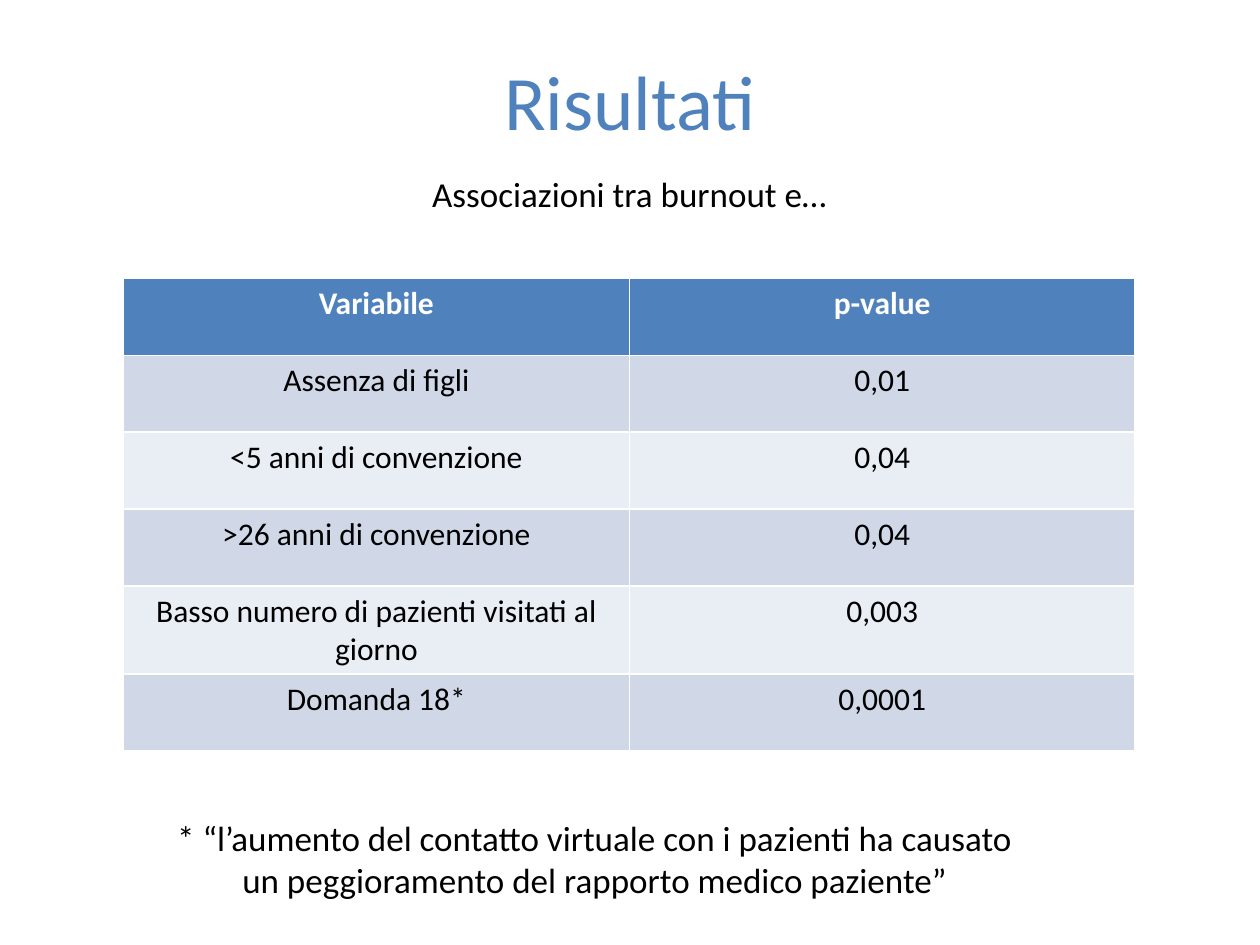
from pptx import Presentation
from pptx import util as u
from pptx.dml.color import RGBColor
from pptx.enum import text

FONT = "Calibri"
BLUE = RGBColor(0x4F, 0x81, 0xBD)
BLACK = RGBColor(0, 0, 0)
WHITE = RGBColor(0xFF, 0xFF, 0xFF)
BANDS = (RGBColor(0xE9, 0xED, 0xF4), RGBColor(0xD0, 0xD8, 0xE8))

ROWS = [
    ("Variabile", "p-value"),
    ("Assenza di figli", "0,01"),
    ("<5 anni di convenzione", "0,04"),
    (">26 anni di convenzione", "0,04"),
    ("Basso numero di pazienti visitati al giorno", "0,003"),
    ("Domanda 18*", "0,0001"),
]
ROW_HEIGHT = 0.61


def place(shape, left, top, width, height):
    shape.left, shape.top = u.Inches(left), u.Inches(top)
    shape.width, shape.height = u.Inches(width), u.Inches(height)


def write(frame, words, size, color, bold=False):
    """Fill a text frame with one centred paragraph."""
    frame.text = words
    para = frame.paragraphs[0]
    para.alignment = text.PP_ALIGN.CENTER
    para.font.name = FONT
    para.font.size = u.Pt(size)
    para.font.bold = bold
    para.font.color.rgb = color


def add_results(page, left, top, width):
    # The default table style supplies the white rules
    frame = page.shapes.add_table(
        len(ROWS), len(ROWS[0]), u.Inches(left), u.Inches(top),
        u.Inches(width), u.Inches(ROW_HEIGHT * len(ROWS)))
    for r, row in enumerate(ROWS):
        header = r == 0
        for c, words in enumerate(row):
            cell = frame.table.cell(r, c)
            write(cell.text_frame, words, 18, WHITE if header else BLACK, header)
            cell.fill.solid()
            cell.fill.fore_color.rgb = BLUE if header else BANDS[r % 2]


def main():
    deck = Presentation()
    deck.slide_width, deck.slide_height = u.Inches(10), u.Inches(7.5)
    page = deck.slides.add_slide(deck.slide_layouts[0])

    # Title
    title = page.shapes.title
    place(title, 0.75, -0.01, 8.5, 1.61)
    write(title.text_frame, "Risultati", 44, BLUE)

    # Footnote
    note = page.placeholders[1]
    place(note, 1.22, 6.43, 7, 0.87)
    write(note.text_frame,
          "* “l’aumento del contatto virtuale con i pazienti ha causato "
          "un peggioramento del rapporto medico paziente”", 20, BLACK)

    # Lead-in above the table
    lead = page.shapes.add_textbox(0, 0, 0, 0)
    place(lead, 1.45, 1.32, 7.09, 0.44)
    lead.text_frame.word_wrap = True
    write(lead.text_frame, "Associazioni tra burnout e…", 20, BLACK)

    add_results(page, 0.98, 2.21, 8.03)
    deck.save("out.pptx")


if __name__ == "__main__":
    main()
